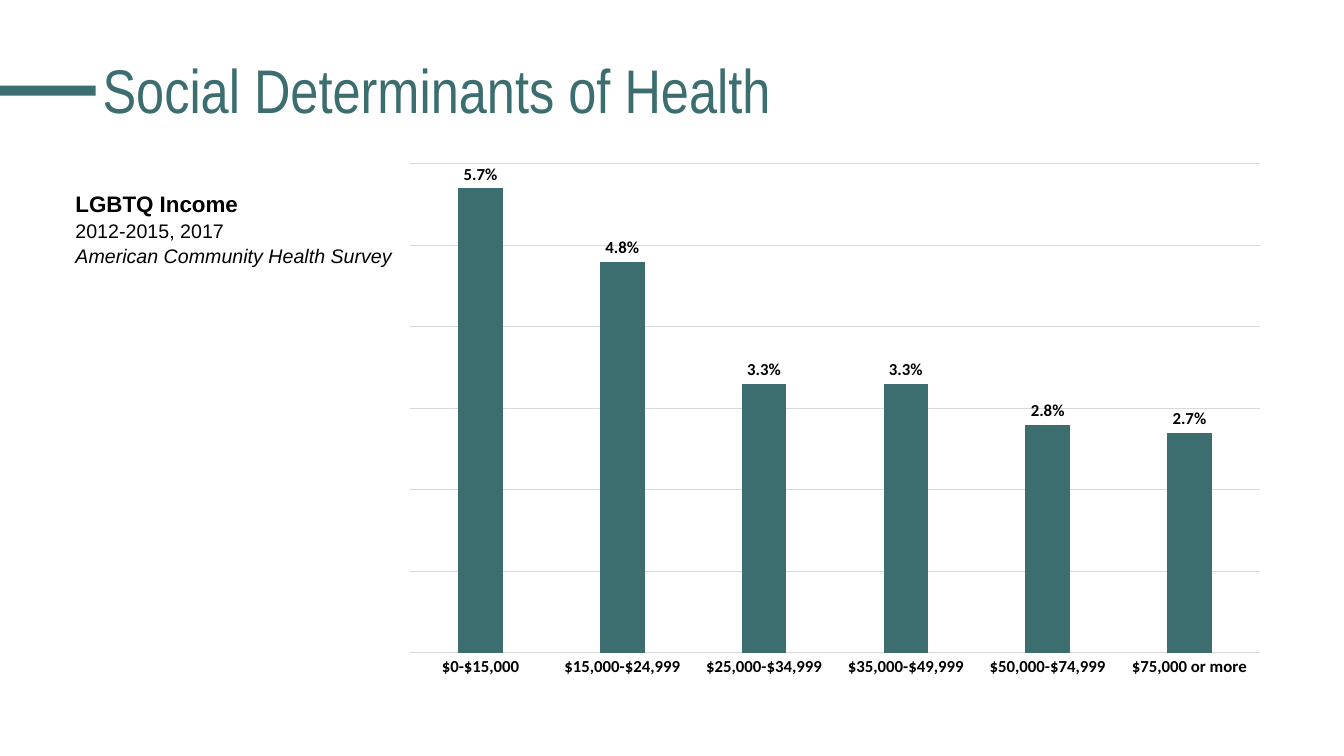
from pptx import Presentation
from pptx.chart.data import CategoryChartData
from pptx.dml.color import RGBColor
from pptx.enum.chart import XL_CHART_TYPE, XL_LABEL_POSITION, XL_TICK_MARK
from pptx.enum.shapes import MSO_SHAPE
from pptx.enum.text import MSO_ANCHOR
from pptx.util import Pt

COLORS = {"teal": "3D6E6F", "text": "000000", "grid": "D9D9D9"}
INCOME_SHARES = {
    "$0-$15,000": 0.057,
    "$15,000-$24,999": 0.048,
    "$25,000-$34,999": 0.033,
    "$35,000-$49,999": 0.033,
    "$50,000-$74,999": 0.028,
    "$75,000 or more": 0.027,
}


def rgb(name):
    return RGBColor.from_string(COLORS[name])


def set_font(font, name="Arial", size=14, color="text", bold=False, italic=False):
    font.name = name
    font.size = Pt(size)
    font.bold = bold
    font.italic = italic
    font.color.rgb = rgb(color)


def add_text(p, text, spacing=1.07, **fmt):
    p.line_spacing = spacing
    r = p.add_run()
    r.text = text
    set_font(r.font, **fmt)


class SlideBuilder:
    label_font = {"name": "Calibri", "size": 12, "bold": True}

    def __init__(self, slide):
        self.s = slide

    def bar(self, x, y, w, h, color):
        sp = self.s.shapes.add_shape(MSO_SHAPE.RECTANGLE, Pt(x), Pt(y), Pt(w), Pt(h))
        sp.shadow.inherit = False
        sp.fill.solid()
        sp.fill.fore_color.rgb = rgb(color)
        sp.line.fill.background()

    def text(self, x, y, w, h, lines, anchor=MSO_ANCHOR.TOP):
        tf = self.s.shapes.add_textbox(Pt(x), Pt(y), Pt(w), Pt(h)).text_frame
        tf.word_wrap = True
        tf.vertical_anchor = anchor
        for i, (text, fmt) in enumerate(lines):
            p = tf.add_paragraph() if i else tf.paragraphs[0]
            add_text(p, text, **fmt)

    def column_chart(self, x, y, w, h, name, values):
        data = CategoryChartData(number_format="0.0%")
        data.categories = list(values)
        data.add_series(name, list(values.values()))
        chart = self.s.shapes.add_chart(
            XL_CHART_TYPE.COLUMN_CLUSTERED, Pt(x), Pt(y), Pt(w), Pt(h), data
        ).chart
        chart.has_legend = False
        chart.has_title = False
        set_font(chart.font, name="Calibri", size=10)
        self.style_axes(chart)
        self.style_columns(chart.plots[0])

    def style_axes(self, chart):
        cat, val = chart.category_axis, chart.value_axis
        cat.major_tick_mark = XL_TICK_MARK.NONE
        set_font(cat.tick_labels.font, **self.label_font)
        val.visible = False
        val.minimum_scale, val.maximum_scale, val.major_unit = 0, 0.06, 0.01
        val.has_major_gridlines = True
        for line in (cat.format.line, val.major_gridlines.format.line):
            line.color.rgb = rgb("grid")
            line.width = Pt(0.75)

    def style_columns(self, plot):
        plot.gap_width = 219
        plot.overlap = -27
        plot.vary_by_categories = False
        fill = plot.series[0].format.fill
        fill.solid()
        fill.fore_color.rgb = rgb("teal")
        plot.has_data_labels = True
        labels = plot.data_labels
        labels.show_value = True
        labels.position = XL_LABEL_POSITION.OUTSIDE_END
        labels.number_format = "0.0%"
        labels.number_format_is_linked = False
        set_font(labels.font, **self.label_font)


def main():
    prs = Presentation()
    prs.slide_width, prs.slide_height = Pt(960), Pt(540)
    b = SlideBuilder(prs.slides.add_slide(prs.slide_layouts[6]))
    b.bar(0, 61.2, 68.4, 7.2, "teal")
    title = {"name": "Arial Narrow", "size": 44, "color": "teal", "spacing": 0.9}
    b.text(66.2, 14.4, 828, 104.4, [("Social Determinants of Health", title)],
           MSO_ANCHOR.MIDDLE)
    b.text(46.8, 131, 270, 81.4, [
        ("LGBTQ Income", {"size": 16, "bold": True}),
        ("2012-2015, 2017", {}),
        ("American Community Health Survey", {"italic": True}),
    ])
    b.column_chart(280, 109.4, 632.9, 381.6, "Series 1", INCOME_SHARES)
    prs.save("out.pptx")


if __name__ == "__main__":
    main()
